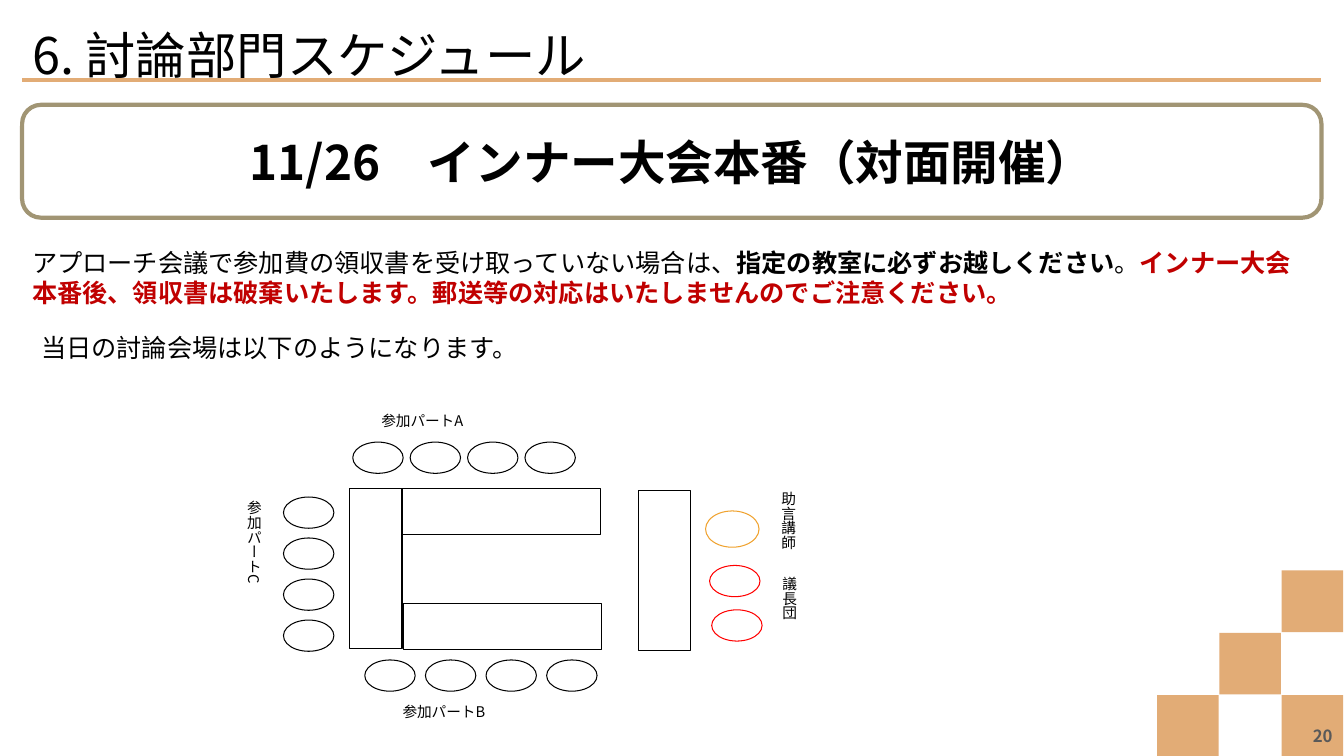
from dataclasses import dataclass, field

from pptx import Presentation
from pptx import util as u
from pptx.dml.color import RGBColor
from pptx.enum import shapes, text
from pptx.oxml import parse_xml
from pptx.oxml.ns import nsdecls, qn

FONT = "Noto Sans CJK JP"
COLORS = {
    "black": "000000", "white": "FFFFFF", "tan": "E2AC76", "frame": "A19574",
    "grey": "595959", "orange": "F0A22E", "red": "FF0000", "warning": "C00000",
}
LABEL_FRAME = {"margin_left": u.Pt(6), "margin_right": u.Pt(6),
               "margin_top": u.Pt(0.7), "margin_bottom": u.Pt(0.7), "word_wrap": True}
MIDDLE_FRAME = {"vertical_anchor": text.MSO_ANCHOR.MIDDLE, "word_wrap": True,
                "auto_size": text.MSO_AUTO_SIZE.NONE}
TOP_FRAME = {**MIDDLE_FRAME, "vertical_anchor": text.MSO_ANCHOR.TOP}
LEFT = {"alignment": text.PP_ALIGN.LEFT, "space_before": u.Pt(0)}


@dataclass
class Box:
    left: float
    top: float
    width: float
    height: float


@dataclass
class Run:
    words: str
    color: str = "black"
    bold: bool = False


@dataclass
class SeatRow:
    left: float
    top: float
    step_x: float = 0
    step_y: float = 0
    count: int = 4
    color: str = "black"
    width: float = 36
    height: float = 22.3


@dataclass
class Label:
    words: str
    box: Box
    vertical: bool = False


@dataclass
class TextStyle:
    size: float
    frame: dict = field(default_factory=dict)
    paragraph: dict = field(default_factory=dict)


TILES = [(2, 2), (0, 2), (2, 0), (1, 1)]
DESKS = [Box(249.8, 349.2, 37.4, 113.8), Box(455.8, 350.6, 37.4, 113.8),
         Box(287.3, 349.2, 141.8, 32.4), Box(288, 431.3, 141.8, 32.4)]
SEAT_ROWS = [
    SeatRow(252, 315.8, step_x=41),
    SeatRow(202.5, 355, step_y=29.3),
    SeatRow(260.6, 471.4, step_x=43.3),
    SeatRow(504, 365, count=1, color="orange", width=38.2, height=25.9),
    SeatRow(506.9, 403.9, step_x=1.5, step_y=31.7, count=2, color="red"),
]
LABELS = [
    Label("参加パートA", Box(266.4, 293.8, 154, 16.6)),
    Label("参加パートC", Box(159.1, 357.1, 34.6, 67.7), vertical=True),
    Label("参加パートB", Box(281.5, 501.1, 157.7, 16.6)),
    Label("助言講師", Box(549.4, 350.6, 25.9, 55.4), vertical=True),
    Label("議長団", Box(549.4, 411.1, 26.6, 50.4), vertical=True),
]


def set_attributes(target, values: dict) -> None:
    for name, value in values.items():
        setattr(target, name, value)


def rgb(color: str) -> RGBColor:
    return RGBColor.from_string(COLORS[color])


def points(box: Box) -> list:
    return [u.Pt(length) for length in (box.left, box.top, box.width, box.height)]


def place(shape, box: Box) -> None:
    set_attributes(shape, dict(zip(("left", "top", "width", "height"), points(box))))


def write(shape, runs: list[Run], style: TextStyle):
    """Fill the shape with one paragraph, in the same font for Latin and Japanese."""
    frame = shape.text_frame
    set_attributes(frame, style.frame)
    paragraph = frame.paragraphs[0]
    set_attributes(paragraph, style.paragraph)
    for part in runs:
        run = paragraph.add_run()
        run.text = part.words
        set_attributes(run.font, {"name": FONT, "size": u.Pt(style.size), "bold": part.bold})
        run.font.color.rgb = rgb(part.color)
        east_asian = parse_xml(f'<a:ea {nsdecls("a")} typeface="{FONT}"/>')
        run.font._element.find(qn("a:latin")).addnext(east_asian)
    return paragraph


def add_shape(slide, kind, box: Box, fill: str = "white",
              line: str | None = None, line_width: float = 0.75):
    shape = slide.shapes.add_shape(kind, *points(box))
    shape.shadow.inherit = False
    shape.fill.solid()
    shape.fill.fore_color.rgb = rgb(fill)
    if line:
        shape.line.color.rgb = rgb(line)
        shape.line.width = u.Pt(line_width)
    else:
        shape.line.fill.background()
    return shape


def add_text(slide, box: Box, runs: list[Run], style: TextStyle) -> None:
    write(slide.shapes.add_textbox(*points(box)), runs, style)


def add_corner_tiles(slide) -> None:
    step = 44.5
    for column, row in TILES:
        box = Box(826.5 + column * step, 407.5 + row * step, 44, 44)
        add_shape(slide, shapes.MSO_SHAPE.RECTANGLE, box, fill="tan")


def add_title(slide) -> None:
    title = slide.shapes.title
    place(title, Box(15.8, 13, 928.1, 51.1))
    write(title, [Run("6. 討論部門スケジュール")], TextStyle(36, MIDDLE_FRAME, LEFT))
    rule = slide.shapes.add_connector(
        shapes.MSO_CONNECTOR.STRAIGHT, u.Pt(15.8), u.Pt(56.9), u.Pt(943.9), u.Pt(56.9))
    rule.line.color.rgb = rgb("tan")
    rule.line.width = u.Pt(3)
    rule._element.spPr.append(parse_xml(f'<a:effectLst {nsdecls("a")}/>'))


def add_banner(slide) -> None:
    banner = add_shape(slide, shapes.MSO_SHAPE.ROUNDED_RECTANGLE,
                       Box(15.8, 74.9, 928.1, 80.6), line="frame", line_width=3)
    centred = {"alignment": text.PP_ALIGN.CENTER,
               "space_before": u.Pt(12), "space_after": u.Pt(12)}
    write(banner, [Run("11/26　インナー大会本番（対面開催）", bold=True)],
          TextStyle(34, MIDDLE_FRAME, centred))


def add_notice(slide) -> None:
    body = slide.placeholders[1]
    place(body, Box(15.8, 172.8, 928.1, 51.1))
    paragraph = write(body, [
        Run("アプローチ会議で参加費の領収書を受け取っていない場合は、"),
        Run("指定の教室に必ずお越しください", bold=True),
        Run("。"),
        Run("インナー大会本番後、領収書は破棄いたします。"
            "郵送等の対応はいたしませんのでご注意ください。", "warning", True),
    ], TextStyle(18, TOP_FRAME, {**LEFT, "space_after": u.Pt(6)}))
    properties = paragraph._p.get_or_add_pPr()
    properties.set("marL", "0")
    properties.set("indent", "0")
    properties.append(parse_xml(f'<a:buNone {nsdecls("a")}/>'))
    add_text(slide, Box(22.3, 234, 915.8, 48.2),
             [Run("当日の討論会場は以下のようになります。")], TextStyle(18, TOP_FRAME, LEFT))


def add_room_plan(slide) -> None:
    for desk in DESKS:
        add_shape(slide, shapes.MSO_SHAPE.RECTANGLE, desk, line="black")
    for row in SEAT_ROWS:
        for index in range(row.count):
            seat = Box(row.left + index * row.step_x, row.top + index * row.step_y,
                       row.width, row.height)
            add_shape(slide, shapes.MSO_SHAPE.OVAL, seat, line=row.color)
    style = TextStyle(10.5, {**LABEL_FRAME, "vertical_anchor": text.MSO_ANCHOR.TOP},
                      {"alignment": text.PP_ALIGN.JUSTIFY})
    for label in LABELS:
        shape = add_shape(slide, shapes.MSO_SHAPE.RECTANGLE, label.box)
        write(shape, [Run(label.words)], style)
        if label.vertical:
            shape.text_frame._txBody.bodyPr.set("vert", "eaVert")


def main() -> None:
    presentation = Presentation()
    set_attributes(presentation, {"slide_width": u.Pt(960), "slide_height": u.Pt(540)})
    slide = presentation.slides.add_slide(presentation.slide_layouts[1])
    add_corner_tiles(slide)
    add_title(slide)
    add_banner(slide)
    add_text(slide, Box(743, 511.2, 216, 28.8), [Run("20", "grey", True)],
             TextStyle(12, MIDDLE_FRAME, {"alignment": text.PP_ALIGN.RIGHT}))
    add_room_plan(slide)
    add_notice(slide)
    presentation.save("out.pptx")


if __name__ == "__main__":
    main()
